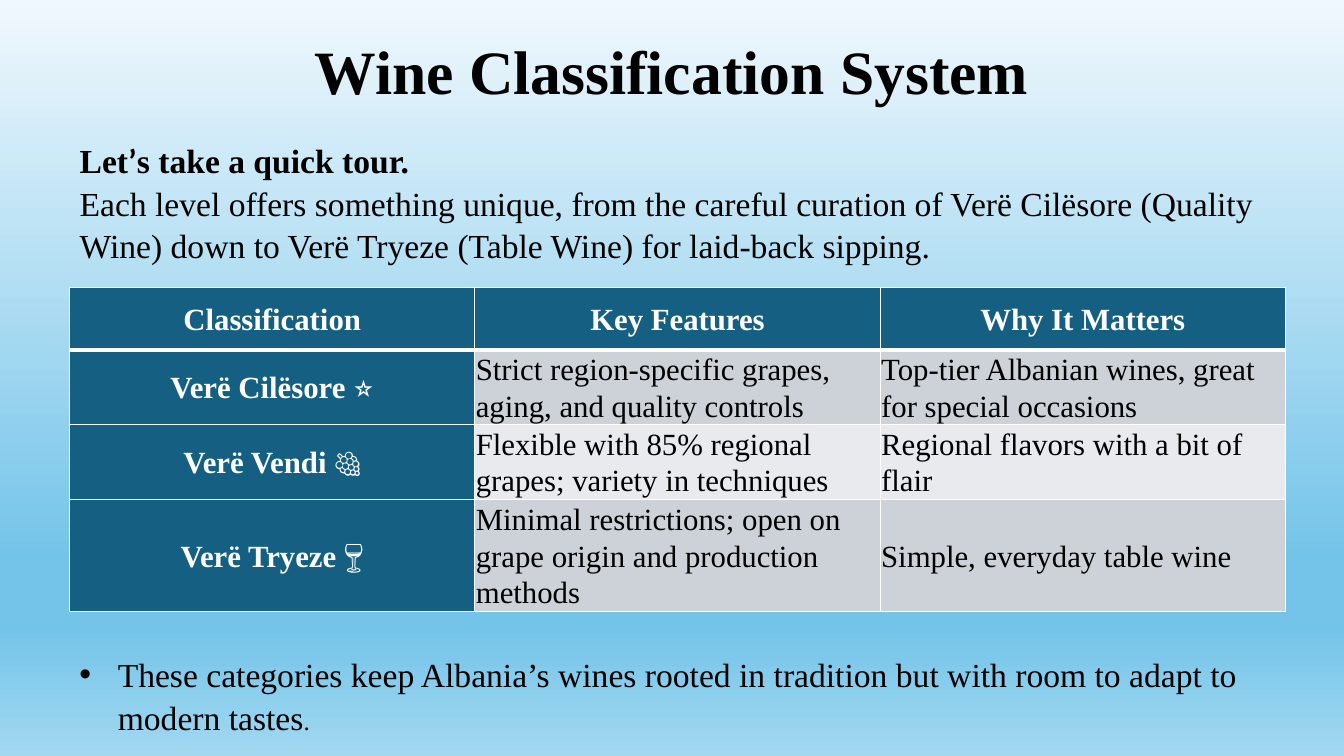
from copy import deepcopy

from pptx import Presentation
from pptx.dml.color import RGBColor
from pptx.enum.text import MSO_ANCHOR, MSO_AUTO_SIZE, PP_ALIGN
from pptx.oxml import parse_xml
from pptx.oxml.ns import nsdecls
from pptx.util import Inches, Pt

LEFT, CENTER = PP_ALIGN.LEFT, PP_ALIGN.CENTER
TOP, MIDDLE = MSO_ANCHOR.TOP, MSO_ANCHOR.MIDDLE
NO_FIT = MSO_AUTO_SIZE.NONE

BLACK = RGBColor(0x00, 0x00, 0x00)
WHITE = RGBColor(0xFF, 0xFF, 0xFF)
TEAL = RGBColor(0x15, 0x60, 0x82)
BANDS = [RGBColor(0xCC, 0xD2, 0xD8), RGBColor(0xE8, 0xEA, 0xED)]
SKY = [
    (0, RGBColor(0xF0, 0xF8, 0xFD)),
    (0.74, RGBColor(0x74, 0xC4, 0xE9)),
    (0.83, RGBColor(0x74, 0xC4, 0xE9)),
    (1, RGBColor(0xA2, 0xD8, 0xF0)),
]
FONT = "Times New Roman"

ROWS = [
    ["Classification", "Key Features", "Why It Matters"],
    ["Verë Cilësore ⭐", "Strict region-specific grapes, aging, and quality controls",
     "Top-tier Albanian wines, great for special occasions"],
    ["Verë Vendi 🍇", "Flexible with 85% regional grapes; variety in techniques",
     "Regional flavors with a bit of flair"],
    ["Verë Tryeze 🍷", "Minimal restrictions; open on grape origin and production methods",
     "Simple, everyday table wine"],
]
ROW_HEIGHTS = [0.62, 0.74, 0.74, 1.11]


def add_text(p, text, size=24, color=BLACK, bold=False, font=FONT,
             align=LEFT, spacing=1.07, after=8):
    p.alignment = align
    p.line_spacing = spacing
    p.space_before = Pt(0)
    p.space_after = Pt(after)
    r = p.add_run()
    r.text = text
    r.font.name = font
    r.font.size = Pt(size)
    r.font.bold = bold
    r.font.color.rgb = color


def place(sp, box, anchor=TOP):
    sp.left, sp.top, sp.width, sp.height = (Inches(v) for v in box)
    tf = sp.text_frame
    tf.word_wrap = True
    tf.auto_size = NO_FIT
    tf.vertical_anchor = anchor
    return tf


def paint_background(s):
    fill = s.background.fill
    fill.gradient()
    fill.gradient_angle = 270
    stops = fill._fill._gradFill.gsLst
    for _ in range(len(SKY) - len(stops)):
        stops.append(deepcopy(stops[0]))
    for stop, (position, color) in zip(fill.gradient_stops, SKY):
        stop.position = position
        stop.color.rgb = color


def add_title(s, box):
    tf = place(s.shapes.title, box, MIDDLE)
    add_text(tf.paragraphs[0], "Wine Classification System", size=44, bold=True,
             align=CENTER, spacing=1.15)


def add_intro(s, box):
    tf = place(s.placeholders[1], box)
    p = tf.paragraphs[0]
    for text, font in [("Let", FONT), ("’", "Calibri"), ("s take a quick tour.", FONT)]:
        add_text(p, text, bold=True, font=font, spacing=1.0, after=0)
    add_text(tf.add_paragraph(),
             "Each level offers something unique, from the careful curation of Verë Cilësore "
             "(Quality Wine) down to Verë Tryeze (Table Wine) for laid-back sipping.",
             spacing=1.05, after=0)


def set_borders(cell, bottom):
    tcPr = cell._tc.get_or_add_tcPr()
    for i, (side, width) in enumerate([("L", 1), ("R", 1), ("T", 1), ("B", bottom)]):
        tcPr.insert(i, parse_xml(
            f'<a:ln{side} {nsdecls("a")} w="{Pt(width)}"><a:solidFill>'
            f'<a:srgbClr val="{WHITE}"/></a:solidFill></a:ln{side}>'))


def add_classification_table(s, left, top, width):
    table = s.shapes.add_table(len(ROWS), len(ROWS[0]), Inches(left), Inches(top),
                               Inches(width), Inches(sum(ROW_HEIGHTS))).table
    for col in table.columns:
        col.width = Inches(width / len(ROWS[0]))
    for i, (row, height) in enumerate(zip(ROWS, ROW_HEIGHTS)):
        table.rows[i].height = Inches(height)
        for j, text in enumerate(row):
            cell = table.cell(i, j)
            heading = i == 0 or j == 0
            cell.fill.solid()
            cell.fill.fore_color.rgb = TEAL if heading else BANDS[(i - 1) % 2]
            cell.margin_left = cell.margin_right = Inches(0.01)
            cell.margin_top = cell.margin_bottom = Inches(0.01)
            cell.vertical_anchor = MIDDLE
            add_text(cell.text_frame.paragraphs[0], text, size=22, bold=heading,
                     color=WHITE if heading else BLACK, align=CENTER if heading else LEFT)
            set_borders(cell, 3 if i == 0 else 1)


def add_takeaway(s, box):
    sp = s.shapes.add_textbox(*(Inches(v) for v in box))
    p = place(sp, box).paragraphs[0]
    add_text(p, "These categories keep Albania’s wines rooted in tradition but with room "
                "to adapt to modern tastes")
    add_text(p, ".", size=18)
    pPr = p._p.get_or_add_pPr()
    pPr.set("marL", str(Inches(0.38)))
    pPr.set("indent", str(-Inches(0.38)))
    pPr.append(parse_xml(f'<a:buFont {nsdecls("a")} typeface="Arial"/>'))
    pPr.append(parse_xml(f'<a:buChar {nsdecls("a")} char="•"/>'))


def main():
    prs = Presentation()
    prs.slide_width = Inches(13.33)
    prs.slide_height = Inches(7.5)
    s = prs.slides.add_slide(prs.slide_layouts[0])
    paint_background(s)
    add_title(s, (0, 0, 13.33, 1.28))
    add_intro(s, (0.69, 1.34, 12.64, 5.38))
    add_classification_table(s, 0.69, 2.85, 12.06)
    add_takeaway(s, (0.69, 6.41, 12.06, 0.94))
    prs.save("out.pptx")


if __name__ == "__main__":
    main()
